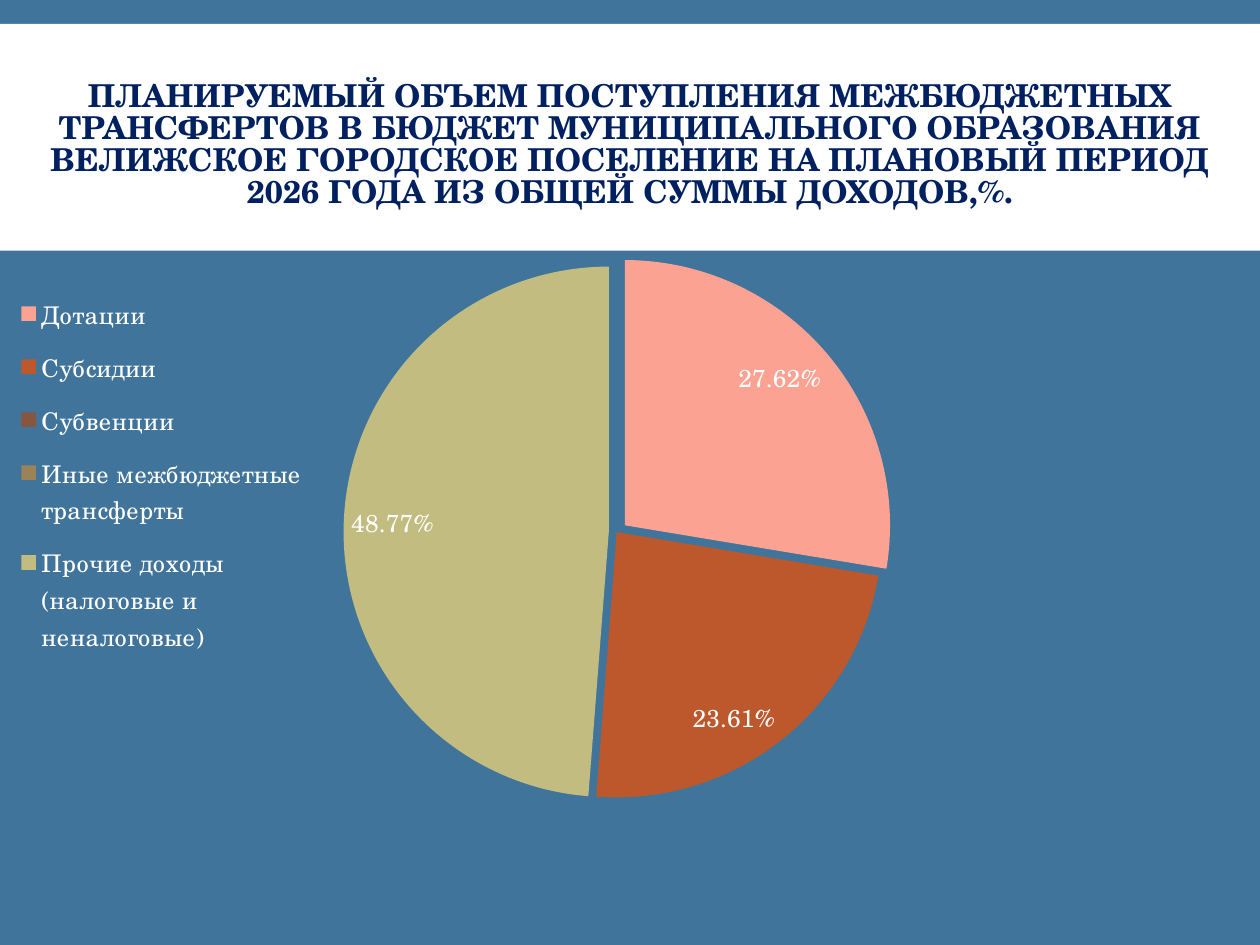
from lxml.etree import SubElement
from pptx import Presentation
from pptx.chart.data import CategoryChartData
from pptx.dml.color import RGBColor
from pptx.enum.chart import XL_CHART_TYPE, XL_LABEL_POSITION, XL_LEGEND_POSITION
from pptx.enum.shapes import MSO_SHAPE
from pptx.enum.text import MSO_ANCHOR, PP_ALIGN
from pptx.oxml import parse_xml
from pptx.oxml.ns import nsdecls, qn
from pptx.util import Inches, Pt

# Content
TITLE = ("ПЛАНИРУЕМЫЙ ОБЪЕМ ПОСТУПЛЕНИЯ МЕЖБЮДЖЕТНЫХ ТРАНСФЕРТОВ В БЮДЖЕТ "
         "МУНИЦИПАЛЬНОГО ОБРАЗОВАНИЯ ВЕЛИЖСКОЕ ГОРОДСКОЕ ПОСЕЛЕНИЕ НА ПЛАНОВЫЙ "
         "ПЕРИОД 2026 ГОДА ИЗ ОБЩЕЙ СУММЫ ДОХОДОВ,%.")
# Category, share, colour, explosion in percent
SLICES = [
    ("Дотации", 0.2762, "FBA293", 4),
    ("Субсидии", 0.2361, "BD582C", 0),
    ("Субвенции", 0, "865640", 0),
    ("Иные межбюджетные трансферты", 0, "9B8357", 0),
    ("Прочие доходы (налоговые и неналоговые)", 0.4877, "C2BC80", 3),
]
COLORS = {"back": "40749B", "band": "FFFFFF", "title": "002060", "text": "FFFFFF"}
FONT = "TeX Gyre Schola"
W, H = 10, 7.5

# Layout: boxes in inches, chart parts as shares of the chart
BAND = (0, 0.19, W, 1.8)
TITLE_BOX = (0, 0.58, W, 1.16)
CHART_BOX = (0, 2, 9.86, 5.36)
PLOT = (0.283, 0.022, 0.427, 0.786)
LEGEND = (0.01, 0.04, 0.24, 0.58)


def rgb(name):
    return RGBColor.from_string(COLORS.get(name, name))


def box(at):
    return [Inches(v) for v in at]


def set_font(font, color, **values):
    for key, value in values.items():
        setattr(font, key, value)
    font.color.rgb = rgb(color)


def place(parent, at, inner=False):
    """Give a plot area or a legend a fixed place in the chart."""
    for old in parent.findall(qn("c:layout")):
        parent.remove(old)
    layout = parse_xml(f"<c:layout {nsdecls('c')}><c:manualLayout/></c:layout>")
    values = [("layoutTarget", "inner")] if inner else []
    values += [("xMode", "edge"), ("yMode", "edge"), *zip("xywh", at)]
    for tag, value in values:
        SubElement(layout[0], qn(f"c:{tag}")).set("val", str(value))
    if inner:
        parent.insert(0, layout)
    else:
        parent.find(qn("c:legendPos")).addnext(layout)


prs = Presentation()
prs.slide_width, prs.slide_height = Inches(W), Inches(H)
s = prs.slides.add_slide(prs.slide_layouts[6])
s.background.fill.solid()
s.background.fill.fore_color.rgb = rgb("back")

# Title band
sp = s.shapes.add_shape(MSO_SHAPE.RECTANGLE, *box(BAND))
sp.shadow.inherit = False
sp.fill.solid()
sp.fill.fore_color.rgb = rgb("band")
sp.line.fill.background()

# Title
tf = s.shapes.add_textbox(*box(TITLE_BOX)).text_frame
tf.word_wrap = True
tf.vertical_anchor = MSO_ANCHOR.MIDDLE
p = tf.paragraphs[0]
p.alignment, p.line_spacing = PP_ALIGN.CENTER, 0.85
r = p.add_run()
r.text = TITLE
set_font(r.font, "title", name=FONT, size=Pt(18), bold=True)

# Pie chart
data = CategoryChartData(number_format="0.00%")
data.categories = [name for name, *_ in SLICES]
data.add_series("Series 1", [share for _, share, *_ in SLICES])
chart = s.shapes.add_chart(XL_CHART_TYPE.PIE, *box(CHART_BOX), data).chart
chart.has_title = False
set_font(chart.font, "text", name="Calibri", size=Pt(10))
plot = chart.plots[0]
plot.vary_by_categories = True
series = plot.series[0]

# Value labels
labels = series.data_labels
for key, value in {"show_value": True, "show_percentage": False,
                   "number_format": "0.00%", "number_format_is_linked": False,
                   "position": XL_LABEL_POSITION.INSIDE_END}.items():
    setattr(labels, key, value)
set_font(labels.font, "text", name=FONT, size=Pt(14))

# Slices; empty ones carry no label
hidden = 0
for i, (_, share, color, explosion) in enumerate(SLICES):
    point = series.points[i]
    point.format.fill.solid()
    point.format.fill.fore_color.rgb = rgb(color)
    if explosion:
        point.format.fill._xPr.addprevious(parse_xml(
            f'<c:explosion {nsdecls("c")} val="{explosion}"/>'))
    if not share:
        labels._element.insert(hidden, parse_xml(
            f'<c:dLbl {nsdecls("c")}><c:idx val="{i}"/><c:delete val="1"/></c:dLbl>'))
        hidden += 1

# Legend and placement
chart.has_legend = True
legend = chart.legend
legend.position = XL_LEGEND_POSITION.BOTTOM
legend.include_in_layout = False
set_font(legend.font, "text", name=FONT, size=Pt(13.9))
place(legend._element, LEGEND)
place(chart._chartSpace.chart.plotArea, PLOT, inner=True)

prs.save("out.pptx")
